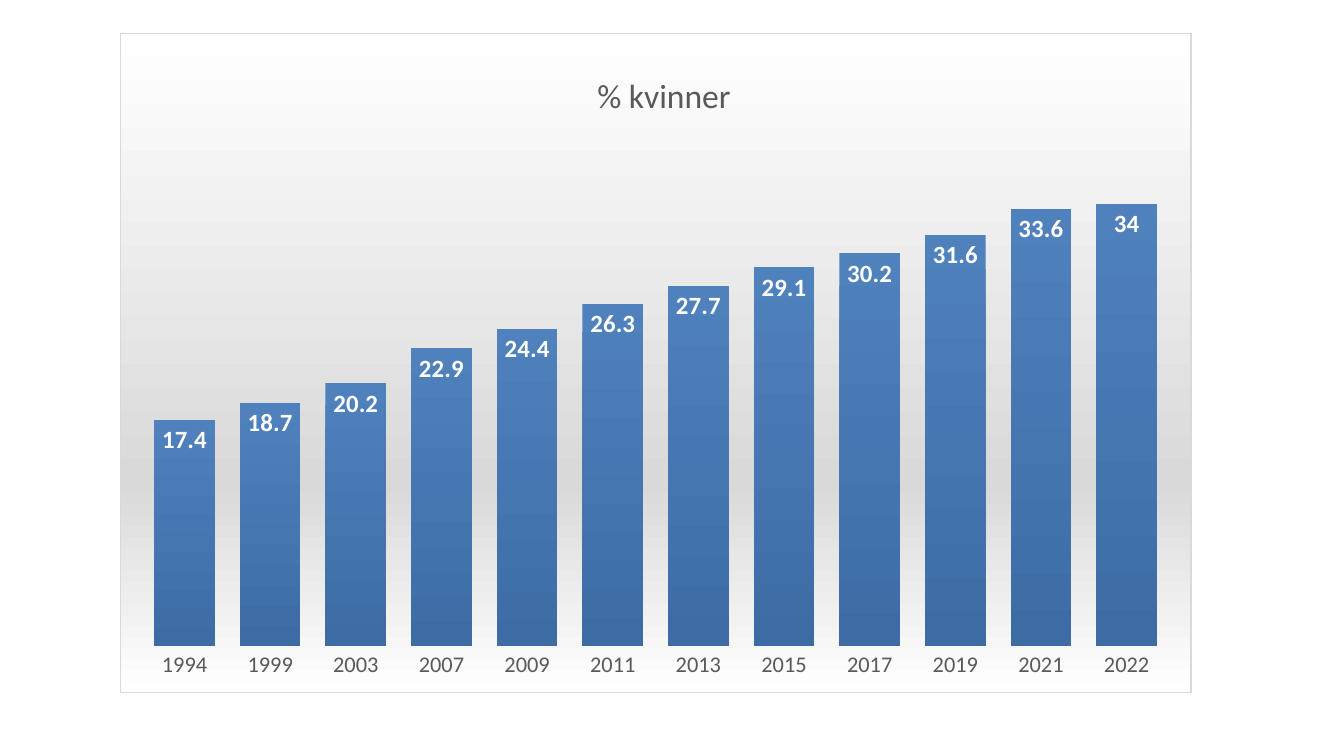
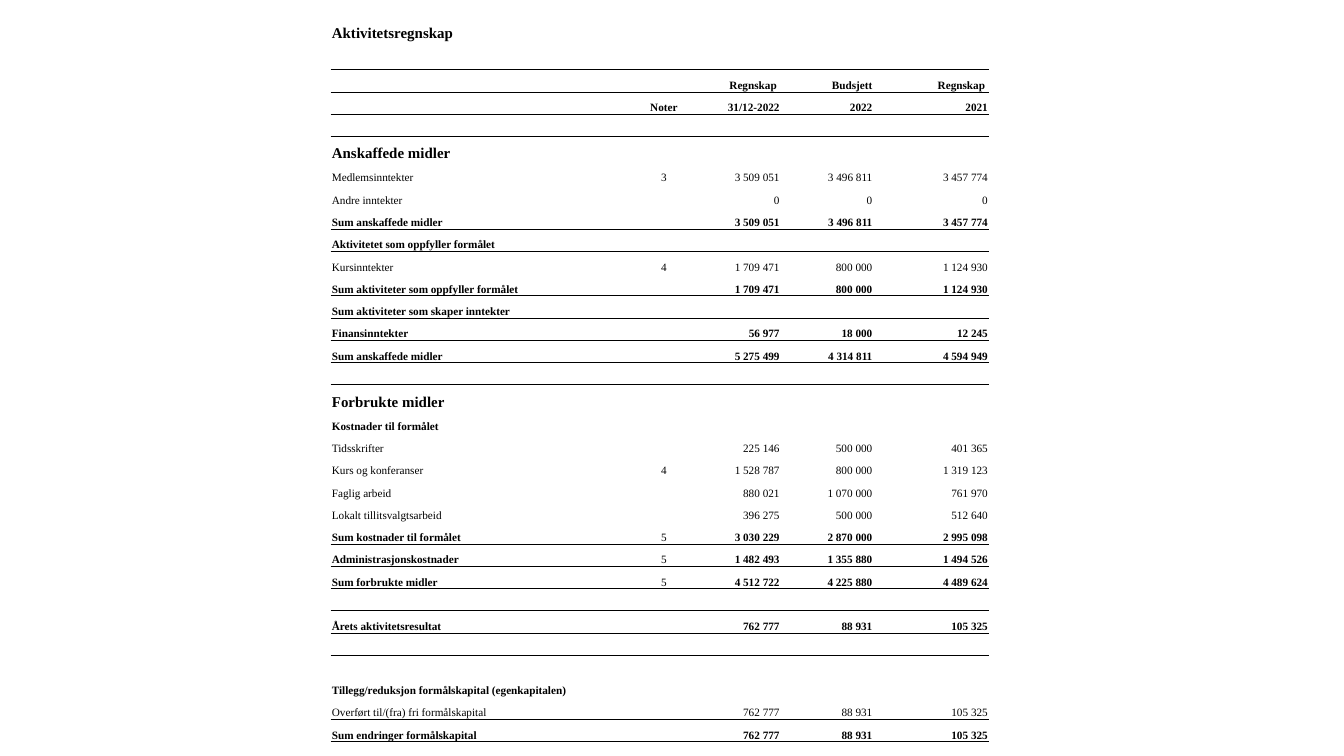
from pptx import Presentation
from pptx import util as u
from pptx.chart.data import CategoryChartData
from pptx.dml.color import RGBColor
from pptx.enum import chart as charts, text
from pptx.oxml import parse_xml
from pptx.oxml.ns import nsdecls, qn

Pt = u.Pt
BLACK = RGBColor(0x00, 0x00, 0x00)
WHITE = RGBColor(0xFF, 0xFF, 0xFF)
GREY_TEXT = RGBColor(0x59, 0x59, 0x59)
LIGHT_GREY = RGBColor(0xD9, 0xD9, 0xD9)
BAR_TOP = RGBColor(0x4F, 0x81, 0xBD)
BAR_BOTTOM = RGBColor(0x3D, 0x6C, 0xA4)
CHART_FONT = "Calibri"
TABLE_FONT = "Times New Roman"
PLAIN_TABLE_STYLE = "{2D5ABB26-0587-4C30-8999-92F81FD0307C}"
LEFT, CENTER, RIGHT = text.PP_ALIGN.LEFT, text.PP_ALIGN.CENTER, text.PP_ALIGN.RIGHT

# Boxes: left, top, width, height in points
CHART_BOX = (64.1, 17.5, 574.3, 354)
TABLE_BOX = (177.1, 7.2, 352.8, 391)

WOMEN_SHARE = {
    "1994": 17.4, "1999": 18.7, "2003": 20.2, "2007": 22.9, "2009": 24.4, "2011": 26.3,
    "2013": 27.7, "2015": 29.1, "2017": 30.2, "2019": 31.6, "2021": 33.6, "2022": 34,
}

COLUMN_WIDTHS = (165.6, 25.9, 49.7, 49.7, 61.9)
COLUMN_ALIGNS = (LEFT, CENTER, RIGHT, RIGHT, RIGHT)
ROW_HEIGHT = 11.95
# Row kinds: only what differs from a plain row
KINDS = {
    "title": dict(size=8, bold=True, height=15.1),
    "top gap": dict(ruled=True, height=15.1),
    "header": dict(bold=True, bold_note=True, filled=True),
    "header end": dict(bold=True, bold_note=True, filled=True, ruled=True),
    "heading": dict(size=8, bold=True, height=13.7),
    "subheading": dict(bold=True),
    "wide": dict(bold=True, height=22.3, merged=True),
    "plain": {},
    "plain ruled": dict(ruled=True),
    "sum": dict(bold=True, ruled=True),
    "result": dict(bold=True, ruled=True, filled=True),
}
ACCOUNTS = [
    ("title", "Aktivitetsregnskap"),
    ("top gap",),
    ("header", "", "", "Regnskap ", "Budsjett", "Regnskap "),
    ("header end", "", "Noter", "31/12-2022", "2022", "2021"),
    ("plain",),
    ("heading", "Anskaffede midler"),
    ("plain", "Medlemsinntekter", "3", "3 509 051", "3 496 811", "3 457 774"),
    ("plain", "Andre inntekter", "", "0", "0", "0"),
    ("sum", "Sum anskaffede midler", "", "3 509 051", "3 496 811", "3 457 774"),
    ("subheading", "Aktivitetet som oppfyller formålet"),
    ("plain", "Kursinntekter", "4", "1 709 471", "800 000", "1 124 930"),
    ("sum", "Sum aktiviteter som oppfyller formålet", "", "1 709 471", "800 000", "1 124 930"),
    ("sum", "Sum aktiviteter som skaper inntekter"),
    ("sum", "Finansinntekter", "", "56 977", "18 000", "12 245"),
    ("sum", "Sum anskaffede midler", "", "5 275 499", "4 314 811", "4 594 949"),
    ("plain",),
    ("heading", "Forbrukte midler"),
    ("subheading", "Kostnader til formålet"),
    ("plain", "Tidsskrifter", "", "225 146", "500 000", "401 365"),
    ("plain", "Kurs og konferanser", "4", "1 528 787", "800 000", "1 319 123"),
    ("plain", "Faglig arbeid", "", "880 021", "1 070 000", "761 970"),
    ("plain", "Lokalt tillitsvalgtsarbeid", "", "396 275", "500 000", "512 640"),
    ("sum", "Sum kostnader til formålet", "5", "3 030 229", "2 870 000", "2 995 098"),
    ("sum", "Administrasjonskostnader", "5", "1 482 493", "1 355 880", "1 494 526"),
    ("sum", "Sum forbrukte midler", "5", "4 512 722", "4 225 880", "4 489 624"),
    ("plain",),
    ("result", "Årets aktivitetsresultat", "", "762 777", "88 931", "105 325"),
    ("plain",),
    ("wide", "Tillegg/reduksjon formålskapital (egenkapitalen)"),
    ("plain ruled", "Overført til/(fra) fri formålskapital", "", "762 777", "88 931", "105 325"),
    ("sum", "Sum endringer formålskapital", "", "762 777", "88 931", "105 325"),
]


def set_font(font, face, size, color, bold=False):
    font.name, font.size, font.bold = face, Pt(size), bold
    font.color.rgb = color


def write_text(frame, words, face, size, color, bold=False, align=LEFT):
    """Write one paragraph; an empty one still gets its size, which keeps rows low."""
    para = frame.paragraphs[0]
    para.alignment = align
    if words:
        span = para.add_run()
        span.text = words
        set_font(span.font, face, size, color, bold)
    else:
        para._p.append(parse_xml(f'<a:endParaRPr {nsdecls("a")} sz="{size * 100}"/>'))


def gradient(*stops):
    """Vertical gradient from (percent, colour) stops."""
    marks = "".join(f'<a:gs pos="{percent * 1000}"><a:srgbClr val="{color}"/></a:gs>'
                    for percent, color in stops)
    return (f'<a:gradFill {nsdecls("a")} rotWithShape="1"><a:gsLst>{marks}</a:gsLst>'
            '<a:lin ang="5400000" scaled="0"/></a:gradFill>')


def set_layout(parent, **places):
    """Place a chart part by fractions of the chart's size."""
    old = parent.find(qn("c:layout"))
    if old is not None:
        parent.remove(old)
    target = '<c:layoutTarget val="inner"/>' if "w" in places else ""
    modes = "".join(f'<c:{key}Mode val="edge"/>' for key in "xy")
    values = "".join(f'<c:{key} val="{value}"/>' for key, value in places.items())
    layout = parse_xml(f'<c:layout {nsdecls("c")}><c:manualLayout>{target}{modes}{values}'
                       '</c:manualLayout></c:layout>')
    parent.insert(0 if parent.find(qn("c:tx")) is None else 1, layout)


def paint_chart_area(chart):
    fill = gradient((0, WHITE), (68, LIGHT_GREY), (100, WHITE))
    area = parse_xml(f'<c:spPr {nsdecls("c", "a")}>{fill}<a:ln w="{Pt(0.75)}"><a:solidFill>'
                     f'<a:srgbClr val="{LIGHT_GREY}"/></a:solidFill></a:ln></c:spPr>')
    chart._chartSpace.find(qn("c:chart")).addnext(area)


def add_share_chart(page, box):
    chart_data = CategoryChartData()
    chart_data.categories = list(WOMEN_SHARE)
    chart_data.add_series("% kvinner", list(WOMEN_SHARE.values()))
    chart = page.shapes.add_chart(charts.XL_CHART_TYPE.COLUMN_CLUSTERED,
                                  *map(Pt, box), chart_data).chart
    set_font(chart.font, CHART_FONT, 10, BLACK)
    paint_chart_area(chart)
    chart.has_legend = False
    chart.has_title = True
    write_text(chart.chart_title.text_frame, "% kvinner", CHART_FONT, 18, GREY_TEXT, align=CENTER)
    set_layout(chart.chart_title._element, x=0.44, y=0.05)
    set_layout(chart._chartSpace.chart.plotArea, x=0.02, y=0.14, w=0.96, h=0.79)

    values = chart.value_axis
    values.minimum_scale, values.maximum_scale = 0, 40
    values.has_major_gridlines = False
    values.visible = False
    years = chart.category_axis
    years.major_tick_mark = charts.XL_TICK_MARK.NONE
    years.format.line.fill.background()
    set_font(years.tick_labels.font, CHART_FONT, 12, GREY_TEXT)

    plot = chart.plots[0]
    plot.gap_width = 41
    plot.vary_by_categories = False
    bars = plot.series[0]
    bars.invert_if_negative = False
    bars._element.get_or_add_spPr().append(parse_xml(gradient((0, BAR_TOP), (100, BAR_BOTTOM))))
    labels = bars.data_labels
    labels.show_value = True
    labels.position = charts.XL_LABEL_POSITION.INSIDE_END
    set_font(labels.font, CHART_FONT, 13.3, WHITE, bold=True)


def format_cell(cell, sides, filled):
    cell.margin_left = cell.margin_right = cell.margin_top = Pt(0.7)
    cell.margin_bottom = 0
    cell.vertical_anchor = text.MSO_ANCHOR.BOTTOM
    properties = cell._tc.get_or_add_tcPr()
    for side in sides:
        properties.append(parse_xml(
            f'<a:ln{side} {nsdecls("a")} w="{Pt(0.5)}"><a:solidFill>'
            f'<a:srgbClr val="{BLACK}"/></a:solidFill></a:ln{side}>'))
    if filled:
        cell.fill.solid()
        cell.fill.fore_color.rgb = WHITE
    else:
        cell.fill.background()


def add_accounts_table(page, box):
    table = page.shapes.add_table(len(ACCOUNTS), len(COLUMN_WIDTHS), *map(Pt, box)).table
    table.first_row = table.horz_banding = False
    table._tbl.tblPr.find(qn("a:tableStyleId")).text = PLAIN_TABLE_STYLE
    for column, width in zip(table.columns, COLUMN_WIDTHS):
        column.width = Pt(width)

    ruled_above = False
    for number, (kind, *words) in enumerate(ACCOUNTS):
        look = KINDS[kind]
        ruled = look.get("ruled", False)
        sides = "T" * ruled_above + "B" * ruled
        row = table.rows[number]
        row.height = Pt(look.get("height", ROW_HEIGHT))
        words += [""] * (len(COLUMN_WIDTHS) - len(words))
        for index, (cell, word, align) in enumerate(zip(row.cells, words, COLUMN_ALIGNS)):
            bold = look.get("bold", False) and (index != 1 or look.get("bold_note", False))
            format_cell(cell, sides, look.get("filled", False))
            write_text(cell.text_frame, word, TABLE_FONT, look.get("size", 6), BLACK,
                       bold=bold, align=align)
        if look.get("merged"):
            table.cell(number, 0).merge(table.cell(number, 1))
        ruled_above = ruled


def main():
    deck = Presentation()
    deck.slide_width, deck.slide_height = Pt(720), Pt(405)
    blank = deck.slide_layouts[6]
    add_share_chart(deck.slides.add_slide(blank), CHART_BOX)
    add_accounts_table(deck.slides.add_slide(blank), TABLE_BOX)
    deck.save("out.pptx")


if __name__ == "__main__":
    main()
